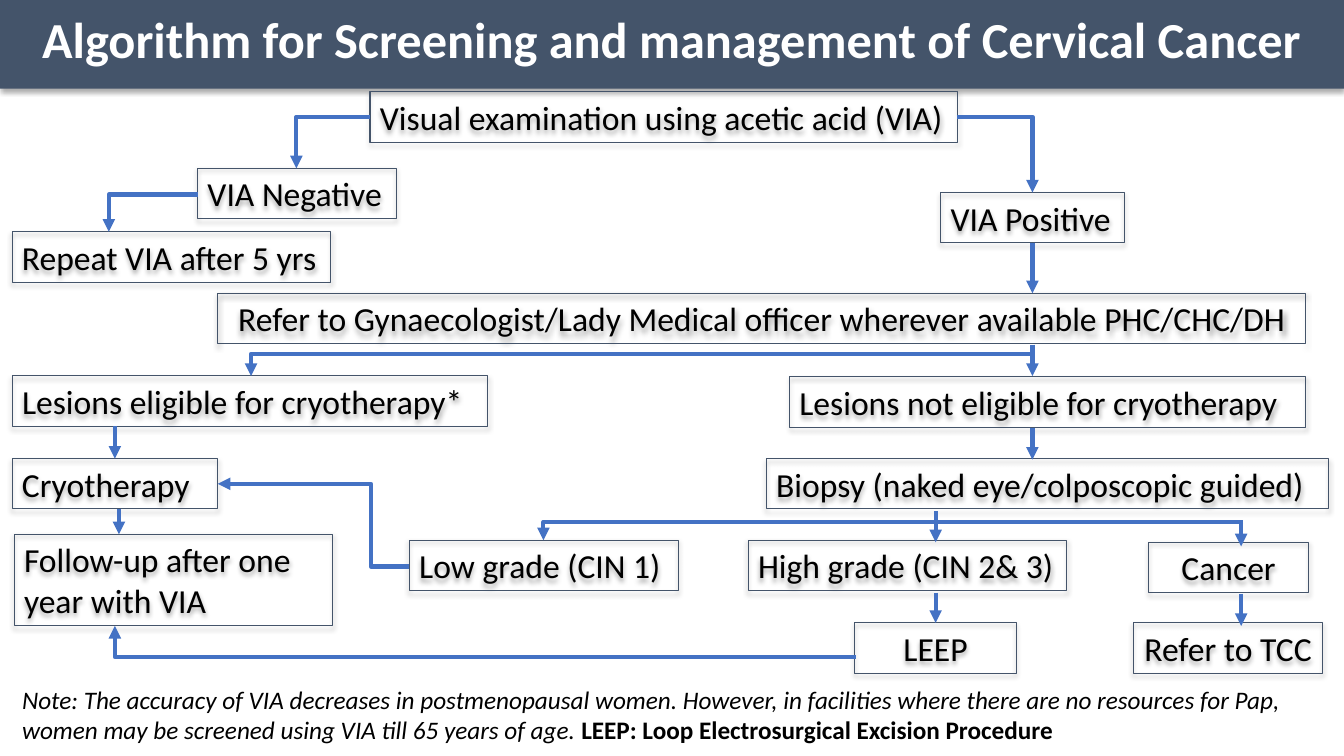
from lxml.etree import SubElement
from pptx import Presentation
from pptx.dml.color import RGBColor
from pptx.enum.shapes import MSO_CONNECTOR, MSO_SHAPE
from pptx.enum.text import MSO_ANCHOR, MSO_AUTO_SIZE, PP_ALIGN
from pptx.oxml.ns import qn
from pptx.util import Inches, Pt

SLATE = RGBColor(0x44, 0x54, 0x6A)
BLUE = RGBColor(0x44, 0x72, 0xC4)
BLACK = RGBColor(0, 0, 0)
WHITE = RGBColor(0xFF, 0xFF, 0xFF)
FONT = "Calibri"
BOX_HEIGHT = 0.5

# Step: text, left, top, width, then optional height and centring
STEPS = {
    "via": ("Visual examination using acetic acid (VIA)", 3.67, 0.91, 5.83),
    "positive": ("VIA Positive", 9.33, 1.91, 1.82),
    "negative": ("VIA Negative", 1.96, 1.67, 1.97),
    "repeat": ("Repeat VIA after 5 yrs", 0.12, 2.3, 3.16),
    "refer": ("Refer to Gynaecologist/Lady Medical officer wherever available PHC/CHC/DH",
              2.16, 2.91, 10.79, BOX_HEIGHT, True),
    "eligible": ("Lesions eligible for cryotherapy*", 0.12, 3.73, 4.72),
    "not eligible": ("Lesions not eligible for cryotherapy", 7.83, 3.74, 5.12),
    "cryotherapy": ("Cryotherapy", 0.12, 4.55, 2.04),
    "follow-up": ("Follow-up after one year with VIA", 0.14, 5.3, 3.16, 0.91),
    "biopsy": ("Biopsy (naked eye/colposcopic guided)", 7.6, 4.55, 5.58),
    "low grade": ("Low grade (CIN 1)", 4.06, 5.36, 2.67),
    "high grade": ("High grade (CIN 2& 3)", 7.42, 5.36, 3.16),
    "cancer": ("Cancer", 11.39, 5.38, 1.59, BOX_HEIGHT, True),
    "tcc": ("Refer to TCC", 11.24, 6.18, 1.88, BOX_HEIGHT, True),
    "leep": ("LEEP", 8.48, 6.18, 1.6, BOX_HEIGHT, True),
}

# Vertical arrows: x, top, bottom, step joined at the start, step joined at the end
DOWN_ARROWS = [
    (10.24, 2.41, 2.91, "positive", None),
    (10.24, 3.42, 3.73, None, None),
    (10.24, 4.25, 4.56, None, None),
    (1.14, 4.23, 4.55, None, "cryotherapy"),
    (1.18, 5.05, 5.3, None, None),
    (9.28, 5.07, 5.38, None, None),
    (9.28, 5.88, 6.18, None, "leep"),
    (12.31, 5.17, 5.42, None, None),
    (12.31, 5.89, 6.21, None, None),
]

# Arrows that run sideways, then turn once: start x, start y, end x, end y
CORNER_ARROWS = [
    (3.67, 1.16, 2.94, 1.67),
    (1.96, 1.93, 1.08, 2.3),
    (9.49, 1.16, 10.24, 1.91),
    (10.24, 3.51, 2.49, 3.73),
    (12.33, 5.18, 5.39, 5.36),
    (8.49, 6.52, 1.14, 6.21),
]


def write_text(paragraph, text, size=24, color=BLACK, bold=False, italic=False):
    run = paragraph.add_run()
    run.text = text
    font = run.font
    font.name, font.size, font.bold, font.italic = FONT, Pt(size), bold, italic
    font.color.rgb = color


def add_soft_shadow(shape):
    effects = SubElement(shape._element.spPr, qn("a:effectLst"))
    shadow = SubElement(effects, qn("a:outerShdw"), blurRad=str(Pt(3.5)),
                        dist=str(Pt(2.2)), dir="5400000", algn="t", rotWithShape="0")
    tint = SubElement(shadow, qn("a:srgbClr"), val="000000")
    SubElement(tint, qn("a:alpha"), val="32000")


def add_title(slide, text):
    banner = slide.shapes.add_shape(MSO_SHAPE.RECTANGLE, 0, Inches(-0.04),
                                    Inches(13.33), Inches(0.92))
    banner.fill.solid()
    banner.fill.fore_color.rgb = SLATE
    banner.line.fill.background()
    add_soft_shadow(banner)
    banner.text_frame.word_wrap = True
    banner.text_frame.vertical_anchor = MSO_ANCHOR.MIDDLE
    heading = banner.text_frame.paragraphs[0]
    heading.alignment = PP_ALIGN.CENTER
    heading.line_spacing = 0.9
    write_text(heading, text, size=36, color=WHITE, bold=True)


def add_step(slide, text, left, top, width, height=BOX_HEIGHT, centred=False):
    step = slide.shapes.add_shape(MSO_SHAPE.RECTANGLE, Inches(left), Inches(top),
                                  Inches(width), Inches(height))
    step.fill.background()
    step.line.color.rgb = SLATE
    step.line.width = Pt(0.75)
    add_soft_shadow(step)
    frame = step.text_frame
    frame.word_wrap = True
    frame.auto_size = MSO_AUTO_SIZE.SHAPE_TO_FIT_TEXT
    frame.vertical_anchor = MSO_ANCHOR.TOP
    frame.paragraphs[0].alignment = PP_ALIGN.CENTER if centred else PP_ALIGN.LEFT
    write_text(frame.paragraphs[0], text)
    return step


def add_arrow(slide, x1, y1, x2, y2, kind=MSO_CONNECTOR.STRAIGHT):
    arrow = slide.shapes.add_connector(kind, Inches(x1), Inches(y1),
                                       Inches(x2), Inches(y2))
    arrow.line.color.rgb = BLUE
    arrow.line.width = Pt(3)
    SubElement(arrow.line._get_or_add_ln(), qn("a:tailEnd"), type="triangle")
    SubElement(arrow._element.spPr, qn("a:effectLst"))
    return arrow


def add_corner_arrow(slide, *ends):
    arrow = add_arrow(slide, *ends, kind=MSO_CONNECTOR.ELBOW)
    arrow._element.spPr.find(qn("a:prstGeom")).set("prst", "bentConnector2")


def add_step_arrow(slide, *ends, turn):
    """Arrow with two turns; turn is the share of the width before the first."""
    arrow = add_arrow(slide, *ends, kind=MSO_CONNECTOR.ELBOW)
    guides = arrow._element.spPr.find(qn("a:prstGeom")).find(qn("a:avLst"))
    SubElement(guides, qn("a:gd"), name="adj1", fmla=f"val {round(turn * 100000)}")


def add_note(slide, note, abbreviation):
    box = slide.shapes.add_textbox(Inches(0.12), Inches(6.74), Inches(13.08), Inches(0.71))
    box.text_frame.word_wrap = True
    paragraph = box.text_frame.paragraphs[0]
    write_text(paragraph, note, size=18, italic=True)
    write_text(paragraph, abbreviation, size=18, bold=True)


def main():
    deck = Presentation()
    deck.slide_width, deck.slide_height = Inches(13.33), Inches(7.5)
    slide = deck.slides.add_slide(deck.slide_layouts[6])

    add_title(slide, "Algorithm for Screening and management of Cervical Cancer")

    # Flowchart steps
    steps = {name: add_step(slide, *step) for name, step in STEPS.items()}

    # Arrows between the steps
    for x, top, bottom, source, target in DOWN_ARROWS:
        arrow = add_arrow(slide, x, top, x, bottom)
        if source:
            arrow.begin_connect(steps[source], 2)
        if target:
            arrow.end_connect(steps[target], 0)
    for ends in CORNER_ARROWS:
        add_corner_arrow(slide, *ends)
    add_step_arrow(slide, 4.06, 5.62, 2.16, 4.8, turn=0.2)

    # Footnote
    add_note(slide,
             "Note: The accuracy of VIA decreases in postmenopausal women. However, in "
             "facilities where there are no resources for Pap, women may be screened "
             "using VIA till 65 years of age. ",
             "LEEP: Loop Electrosurgical Excision Procedure")

    deck.save("out.pptx")


if __name__ == "__main__":
    main()
